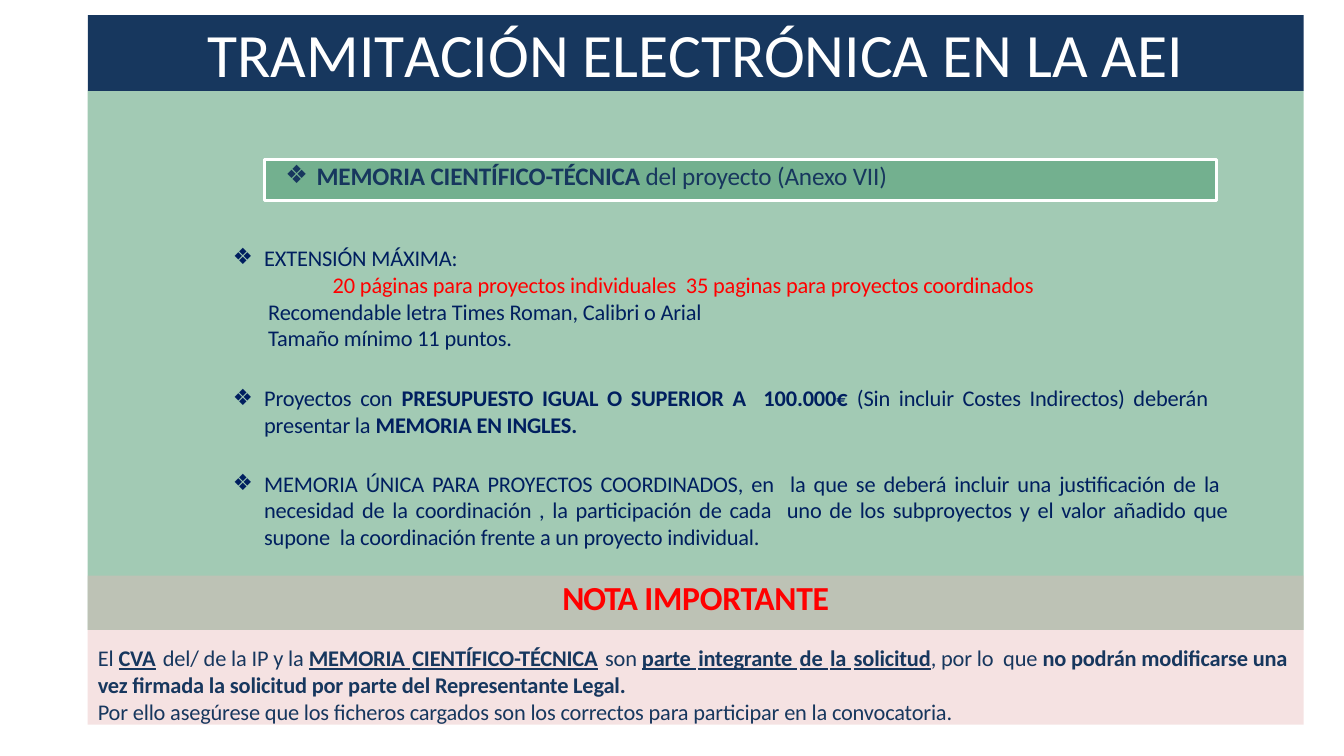
from lxml import etree
from pptx import Presentation
from pptx.dml.color import RGBColor
from pptx.enum.shapes import MSO_SHAPE
from pptx.enum.text import MSO_ANCHOR, MSO_AUTO_SIZE, PP_ALIGN
from pptx.oxml.ns import qn
from pptx.util import Inches, Pt

RECT = MSO_SHAPE.RECTANGLE
LEFT, MID, JUST = PP_ALIGN.LEFT, PP_ALIGN.CENTER, PP_ALIGN.JUSTIFY
WIDE, HIGH = Inches(13.33), Inches(7.5)
HUES = {"white": "FFFFFF", "navy": "17375E", "ink": "001F5F",
        "red": "FF0000", "green": "46976B", "pink": "E6B8B8"}
FRAME = {"word_wrap": True, "auto_size": MSO_AUTO_SIZE.SHAPE_TO_FIT_TEXT,
         "vertical_anchor": MSO_ANCHOR.TOP, "margin_left": 0,
         "margin_right": 0, "margin_top": Inches(0.01), "margin_bottom": 0}
BOLD, LINED, GAP = {"bold": True}, {"bold": True, "underline": True}, 1.6
SIDE, SPAN = 6.53, 90.47


def apply(item, values):
    """Set each named attribute on the item."""
    for name, value in values.items():
        setattr(item, name, value)


def place(shape, left, top, width, height):
    """Place a shape by percent shares of the slide."""
    apply(shape, {"left": int(WIDE * left / 100), "top": int(HIGH * top / 100),
                  "width": int(WIDE * width / 100),
                  "height": int(HIGH * height / 100)})


def paint(shape, hue, alpha=100):
    """Fill a shape with a colour of the given opacity."""
    shape.fill.solid()
    shape.fill.fore_color.rgb = RGBColor.from_string(HUES[hue])
    if alpha < 100:
        tint = shape.fill._xPr.find(".//" + qn("a:srgbClr"))
        etree.SubElement(tint, qn("a:alpha"), val=str(alpha * 1000))


def panel(slide, spot, hue, alpha):
    """Add a plain tinted rectangle."""
    shape = slide.shapes.add_shape(RECT, 0, 0, 0, 0)
    place(shape, *spot)
    paint(shape, hue, alpha)
    shape.line.fill.background()
    shape.shadow.inherit = False
    return shape


def para(frame, runs, size, hue, first=False, align=LEFT, left=0,
         hang=0, before=0, track=-0.1):
    """Write one paragraph from pairs of text and run format."""
    line = frame.paragraphs[0] if first else frame.add_paragraph()
    props = line._p.get_or_add_pPr()
    props.set("marL", str(Inches(left)))
    props.set("indent", str(-Inches(hang)))
    if hang:
        etree.SubElement(props, qn("a:buFont"), typeface="Calibri")
        etree.SubElement(props, qn("a:buChar"), char="❖")
    else:
        etree.SubElement(props, qn("a:buNone"))
    apply(line, {"alignment": align, "space_before": Pt(before),
                 "space_after": Pt(0), "line_spacing": 1.0})
    for text, style in runs:
        style = dict(style)
        pitch = style.pop("track", track)
        run = line.add_run()
        run.text = text
        apply(run.font, {"name": "Calibri", "size": Pt(size),
                         "bold": False, **style})
        run.font.color.rgb = RGBColor.from_string(HUES[hue])
        run.font._element.set("spc", str(round(pitch * 100)))


def fill_text(shape, spot, lines):
    """Place a text shape and write its paragraphs."""
    place(shape, *spot)
    frame = shape.text_frame
    apply(frame, FRAME)
    for row, (runs, size, hue, form) in enumerate(lines):
        para(frame, runs, size, hue, row == 0, **form)


def linked(words):
    """Underline words joined by wide plain-bold spaces."""
    runs = []
    for word in words.split():
        if runs:
            runs.append((" ", {**LINED, "track": GAP}))
        runs.append((word, LINED))
    return runs + [(" ", {"track": GAP})]


def main():
    """Build the slide and save it."""
    deck = Presentation()
    apply(deck, {"slide_width": WIDE, "slide_height": HIGH})
    slide = deck.slides.add_slide(deck.slide_layouts[4])
    title, head, extent, budget, joint = slide.placeholders
    back = panel(slide, (SIDE, 12, SPAN, 71.33), "green", 50)
    slide.shapes.element.insert(2, back._element)

    paint(title, "navy")
    fill_text(title, (SIDE, 2, SPAN, 10), [
        ([("TRAMI", {}), ("T", {"track": -1.8}),
          ("ACIÓN ELECTRÓNICA EN LA AEI", {})],
         44, "white", {"align": MID, "track": 0})])

    paint(head, "green", 50)
    head.line.color.rgb = RGBColor.from_string(HUES["white"])
    head.line.width = Pt(2.04)
    fill_text(head, (19.65, 21.07, 70.89, 5.2), [
        ([("MEMORIA CIENTÍFICO-TÉCNICA ", BOLD),
          ("del proyecto (Anexo VII)", {})],
         18, "navy", {"left": 0.52, "hang": 0.31})])

    item = {"left": 0.33, "hang": 0.31}
    block = {**item, "align": JUST}
    fill_text(extent, (17.18, 32.13, 74.27, 14.53), [
        ([("EXTENSIÓN MÁXIMA:", {})], 16, "ink", item),
        ([("20 páginas para proyectos individuales  35 paginas para "
           "proyectos coordinados", {})], 16, "red", {"left": 1.01}),
        ([("Recomendable letra Times Roman, Calibri o Arial", {})],
         16, "ink", {"left": 0.37}),
        ([("Tamaño mínimo 11 puntos.", {})], 16, "ink", {"left": 0.37})])
    fill_text(budget, (17.18, 50.67, 73.37, 7.33), [
        ([("Proyectos con ", {}),
          ("PRESUPUESTO IGUAL O SUPERIOR A  100.000€ ", BOLD),
          ("(Sin incluir Costes Indirectos) deberán  presentar la ", {}),
          ("MEMORIA EN INGLES.", BOLD)], 16, "ink", block)])
    fill_text(joint, (17.18, 62, 74.27, 10.93), [
        ([("MEMORIA ÚNICA PARA PROYECTOS COORDINADOS, en  la que se deberá "
           "incluir una justificación de la  necesidad de la coordinación , "
           "la participación de cada  uno de los subproyectos y el valor "
           "añadido que supone  la coordinación frente a un proyecto "
           "individual.", {})], 16, "ink", block)])

    note = panel(slide, (SIDE, 76.13, SPAN, 19.73), "pink", 40)
    fill_text(note, (SIDE, 76.13, SPAN, 19.73), [
        ([("NOTA ", {**BOLD, "track": -0.7}),
          ("IMPORTANTE", {**BOLD, "track": -0.2})],
         24, "red", {"align": MID}),
        ([("El ", {}), *linked("CVA"), ("del/ de la IP y la ", {}),
          *linked("MEMORIA CIENTÍFICO-TÉCNICA"), ("son ", {}),
          *linked("parte integrante de la solicitud")[:-1],
          (", por lo  que ", {}),
          ("no podrán modificarse una vez firmada la solicitud por parte "
           "del Representante Legal.", BOLD)],
         16, "navy", {"left": 0.1, "before": 19.3}),
        ([("Por ello asegúrese que los ficheros cargados son los correctos "
           "para participar en la convocatoria.", {})],
         16, "navy", {"left": 0.1})])
    deck.save("out.pptx")


if __name__ == "__main__":
    main()
